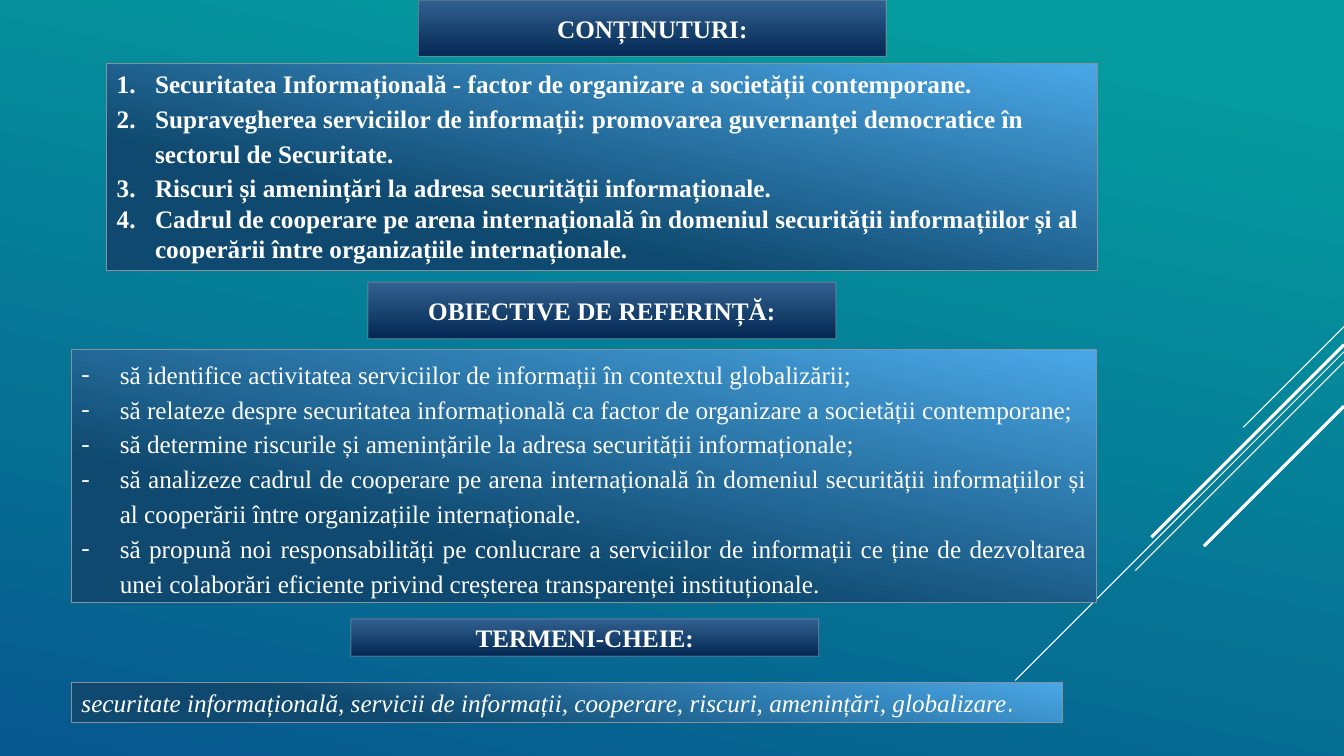
import pptx
import pptx.dml.color
import pptx.enum.shapes
import pptx.enum.text
import pptx.oxml
import pptx.oxml.ns
import pptx.util
from dataclasses import dataclass

Inches = pptx.util.Inches
Pt = pptx.util.Pt
Align = pptx.enum.text.PP_ALIGN
Anchor = pptx.enum.text.MSO_ANCHOR


@dataclass(frozen=True)
class Theme:
    font: str = "Times New Roman"
    stop_font: str = "TeX Gyre Adventor"
    size: int = 18
    white: str = "FFFFFF"
    border: str = "89919C"
    border_width: float = 0.75
    backdrop: tuple = ((0.1, "059B9F"), (1, "06588E"))
    heading: tuple = ((0, "316190"), (1, "042853"))
    panel: tuple = ((0, "4AA8E7"), (0.69, "0F496F"))
    slant: int = 102
    downward: int = 90


def rgb(code):
    return pptx.dml.color.RGBColor.from_string(code)


def add_xml(parent, tag, **attributes):
    element = pptx.oxml.parse_xml(f"<a:{tag} {pptx.oxml.ns.nsdecls('a')}/>")
    for name, value in attributes.items():
        element.set(name, str(value))
    parent.append(element)


class SlideBuilder:
    def __init__(self, deck, theme):
        self.theme = theme
        self.slide = deck.slides.add_slide(deck.slide_layouts[5])
        self.gradient(self.slide.background.fill, theme.backdrop, theme.slant)

    def gradient(self, fill, stops, angle):
        fill.gradient()
        fill.gradient_angle = 360 - angle
        for stop, (position, color) in zip(fill.gradient_stops, stops):
            stop.position = position
            stop.color.rgb = rgb(color)

    def ray(self, right_y, length, width):
        right = 13.33
        ray = self.slide.shapes.add_connector(
            pptx.enum.shapes.MSO_CONNECTOR.STRAIGHT, Inches(right), Inches(right_y),
            Inches(right - length), Inches(right_y + length))
        ray.line.color.rgb = rgb(self.theme.white)
        ray.line.width = Pt(width)
        add_xml(ray._element.spPr, "effectLst")

    def box(self, left, top, width, height):
        box = self.slide.shapes.add_shape(
            pptx.enum.shapes.MSO_SHAPE.RECTANGLE,
            Inches(left), Inches(top), Inches(width), Inches(height))
        box.shadow.inherit = False
        return box

    def outline(self, box):
        box.line.color.rgb = rgb(self.theme.border)
        box.line.width = Pt(self.theme.border_width)

    def format_text(self, paragraph, align, bold=False, italic=False):
        paragraph.alignment = align
        for run in paragraph.runs:
            run.font.name = self.theme.font
            run.font.size = Pt(self.theme.size)
            run.font.color.rgb = rgb(self.theme.white)
            run.font.bold = bold
            run.font.italic = italic

    def heading(self, text, left, top, height=0.56, is_title=False):
        width = 4.64
        if is_title:
            heading = self.slide.shapes.title
            heading.left, heading.top = Inches(left), Inches(top)
            heading.width, heading.height = Inches(width), Inches(height)
        else:
            heading = self.box(left, top, width, height)
        self.gradient(heading.fill, self.theme.heading, self.theme.downward)
        self.outline(heading)
        border_color = heading.line._ln.find(".//" + pptx.oxml.ns.qn("a:srgbClr"))
        add_xml(border_color, "alpha", val=60000)
        frame = heading.text_frame
        frame.text = text
        frame.word_wrap = True
        frame.auto_size = pptx.enum.text.MSO_AUTO_SIZE.NONE
        frame.vertical_anchor = Anchor.MIDDLE
        self.format_text(frame.paragraphs[0], Align.CENTER, bold=True)

    def panel(self, lines, left, top, width, height, align=Align.LEFT, **style):
        panel = self.box(left, top, width, height)
        self.gradient(panel.fill, self.theme.panel, self.theme.slant)
        self.outline(panel)
        frame = panel.text_frame
        frame.text = "\n".join(lines)
        frame.word_wrap = True
        frame.vertical_anchor = Anchor.TOP
        for paragraph in frame.paragraphs:
            self.format_text(paragraph, align, **style)
        return frame.paragraphs

    def bullets(self, paragraphs, tag, spaced, **marker):
        indent = Inches(0.38)
        for index, paragraph in enumerate(paragraphs):
            if index in spaced:
                paragraph.line_spacing = 1.15
            properties = paragraph._p.get_or_add_pPr()
            properties.set("marL", str(indent))
            properties.set("indent", str(-indent))
            add_xml(properties, "buFont", typeface=self.theme.font)
            add_xml(properties, tag, **marker)


def main():
    deck = pptx.Presentation()
    deck.slide_width, deck.slide_height = Inches(13.33), Inches(7.5)
    theme = Theme()
    page = SlideBuilder(deck, theme)

    rays = [(3.24, 1, 0.75), (3.49, 3.26, 0.75), (3.59, 2.07, 0.75),
            (3.42, 1.91, 2.25), (4.03, 1.39, 2.25)]
    for right_y, length, width in rays:
        page.ray(right_y, length, width)

    page.heading("CONȚINUTURI:", 4.15, 0, is_title=True)
    contents = page.panel([
        "Securitatea Informațională - factor de organizare a societății contemporane.",
        "Supravegherea serviciilor de informații: promovarea guvernanței democratice în sectorul de Securitate.",
        "Riscuri și amenințări la adresa securității informaționale.",
        "Cadrul de cooperare pe arena internațională în domeniul securității informațiilor și al cooperării între organizațiile internaționale.",
    ], 1.06, 0.63, 9.83, 2.05, bold=True)
    page.bullets(contents, "buAutoNum", spaced=(1, 2), type="arabicPeriod")

    page.heading("OBIECTIVE DE REFERINȚĂ:", 3.65, 2.8)
    objectives = page.panel([
        "să identifice activitatea serviciilor de informații în contextul globalizării;",
        "să relateze despre securitatea informațională ca factor de organizare a societății contemporane;",
        "să determine riscurile și amenințările la adresa securității informaționale;",
        "să analizeze cadrul de cooperare pe arena internațională în domeniul securității informațiilor și al cooperării între organizațiile internaționale.",
        "să propună noi responsabilități pe conlucrare a serviciilor de informații ce ține de dezvoltarea unei colaborări eficiente privind creșterea transparenței instituționale.",
    ], 0.71, 3.47, 10.17, 2.51, align=Align.JUSTIFY)
    page.bullets(objectives, "buChar", spaced=range(len(objectives)), char="-")

    page.heading("TERMENI-CHEIE:", 3.48, 6.14, height=0.37)
    key_terms = page.panel([
        "securitate informațională, servicii de informații, cooperare, riscuri, amenințări, globalizare",
    ], 0.71, 6.77, 9.83, 0.4, italic=True)
    full_stop = key_terms[0].add_run()
    full_stop.text = "."
    page.format_text(key_terms[0], Align.LEFT, italic=True)
    full_stop.font.name = theme.stop_font

    deck.save("out.pptx")


if __name__ == "__main__":
    main()
